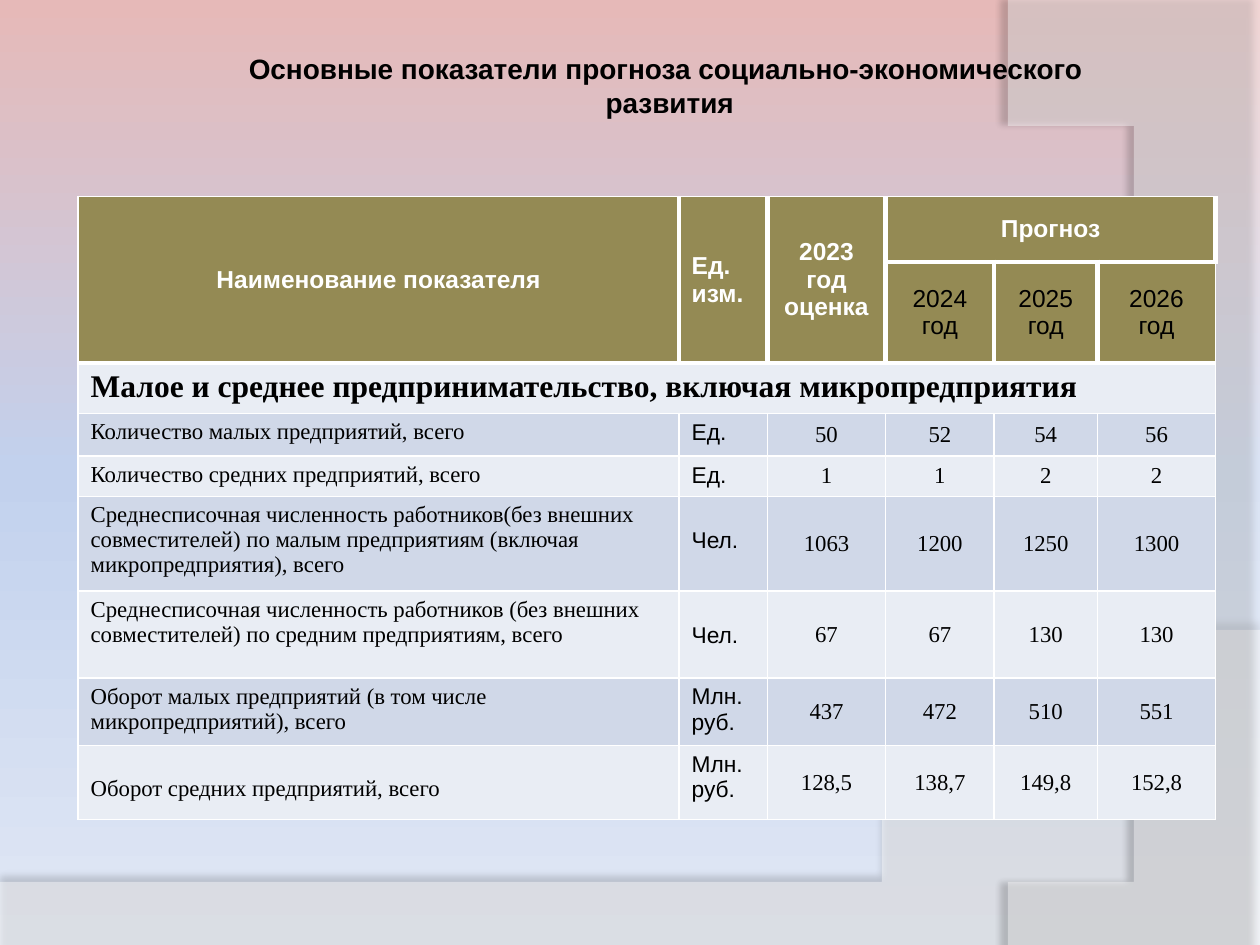
from copy import deepcopy
from dataclasses import dataclass

from pptx import Presentation
from pptx.dml.color import RGBColor
from pptx.enum.text import MSO_ANCHOR, PP_ALIGN
from pptx.oxml import parse_xml
from pptx.oxml.ns import nsdecls, qn
from pptx.util import Inches, Pt


@dataclass(frozen=True)
class Theme:
    """Colours, fonts and type sizes of the slide."""
    sky: tuple = ((0, "E6B9B8"), (0.5, "C2D1ED"), (1, "E1E8F5"))
    white: str = "FFFFFF"
    black: str = "000000"
    header: str = "948A54"
    bands: tuple = ("E9EDF4", "D0D8E8")
    sans: str = "Arial"
    serif: str = "Times New Roman"
    title: int = 16
    heading: int = 14
    section: int = 18
    body: int = 13
    thin: int = 1
    thick: int = 3


THEME = Theme()
COLUMNS = (4.77, 0.7, 0.94, 0.86, 0.82, 0.94)
ROWS = (0.52, 0.8, 0.4, 0.34, 0.32, 0.74, 0.69, 0.53, 0.59)
HEADERS = ("Наименование показателя", "Ед.\nизм.", "2023 год оценка", "Прогноз")
YEARS = ("2024 год", "2025 год", "2026 год")
SECTION = "Малое и среднее предпринимательство, включая микропредприятия"
INDICATORS = (
    ("Количество малых предприятий, всего", "Ед.", "50", "52", "54", "56"),
    ("Количество средних предприятий, всего", "Ед.", "1", "1", "2", "2"),
    ("Среднесписочная численность работников(без внешних совместителей) "
     "по малым предприятиям (включая микропредприятия), всего",
     "Чел.", "1063", "1200", "1250", "1300"),
    ("Среднесписочная численность работников (без внешних совместителей) "
     "по средним предприятиям, всего", "Чел.", "67", "67", "130", "130"),
    ("Оборот малых предприятий (в том числе микропредприятий), всего",
     "Млн.\nруб.", "437", "472", "510", "551"),
    ("Оборот средних предприятий, всего",
     "Млн.\nруб.", "128,5", "138,7", "149,8", "152,8"),
)
LOWERED = {(5, 1), (6, 1), (8, 0)}


def color(code):
    """Turn a hex code into a colour."""
    return RGBColor.from_string(code)


def write(frame, text, size, font, ink, bold=False, align=PP_ALIGN.LEFT):
    """Write each line of the text as a paragraph with one run."""
    for index, line in enumerate(text.split("\n")):
        para = frame.paragraphs[0] if index == 0 else frame.add_paragraph()
        para.alignment = align
        span = para.add_run()
        span.text = line
        span.font.size = Pt(size)
        span.font.name = font
        span.font.bold = bold
        span.font.color.rgb = color(ink)


def paint_background(page):
    """Fill the page with the vertical three-colour gradient."""
    fill = page.background.fill
    fill.gradient()
    fill.gradient_angle = 270
    stops = next(page.element.iter(qn("a:gsLst")))
    stops.append(deepcopy(stops[-1]))
    for stop, (position, code) in zip(fill.gradient_stops, THEME.sky):
        stop.position = position
        stop.color.rgb = color(code)


def curve(start, first, second, end, steps=60):
    """Return points along a cubic curve."""
    points = []
    for step in range(steps + 1):
        t = step / steps
        weights = ((1 - t) ** 3, 3 * t * (1 - t) ** 2, 3 * t * t * (1 - t), t ** 3)
        points.append(tuple(
            sum(w * p[axis] for w, p in zip(weights, (start, first, second, end)))
            for axis in (0, 1)))
    return points


def add_wave(page, points, opacity, shade, distance, direction):
    """Add a translucent white wave with a soft shadow."""
    builder = page.shapes.build_freeform(*points[0], scale=Inches(1))
    builder.add_line_segments(points[1:], close=True)
    wave = builder.convert_to_shape()
    wave.fill.solid()
    wave.fill.fore_color.rgb = color(THEME.white)
    wave.line.fill.background()
    tint = next(wave.element.spPr.iter(qn("a:srgbClr")))
    tint.append(parse_xml(f'<a:alpha {nsdecls("a")} val="{opacity * 1000}"/>'))
    wave.element.spPr.append(parse_xml(
        f'<a:effectLst {nsdecls("a")}><a:outerShdw blurRad="{Pt(4)}" '
        f'dist="{Pt(distance)}" dir="{direction * 60000}" algn="ctr" rotWithShape="0">'
        f'<a:srgbClr val="{THEME.black}"><a:alpha val="{shade * 1000}"/></a:srgbClr>'
        f'</a:outerShdw></a:effectLst>'))


def add_waves(page, width, height):
    """Place the bottom and right waves along the page edges."""
    bottom = curve((width, 5.2), (5.59, 7.29), (3.91, 7.19), (0, 7.05))
    add_wave(page, [(0, height), (width, height)] + bottom, 45, 35, 3.5, 270)
    right = curve((8.21, height), (9.35, 6.19), (10.18, 3), (8, 0))
    add_wave(page, [(width, 0.02), (width, height)] + right, 40, 45, 4, 180)


def add_title(page, left, top, width, height):
    """Place the centred two-line title."""
    box = page.shapes.add_textbox(*map(Inches, (left, top, width, height)))
    box.text_frame.word_wrap = True
    write(box.text_frame,
          "Основные показатели прогноза социально-экономического \nразвития",
          THEME.title, THEME.sans, THEME.black, True, PP_ALIGN.CENTER)


def style_cell(cell, row, column):
    """Set the borders, fill and margins of a cell from its position."""
    head = row < 2
    last = len(COLUMNS) - 1
    heavy = {"L": head and column > 0, "R": head and column < last,
             "T": row in (1, 2), "B": head}
    properties = cell._tc.get_or_add_tcPr()
    for side, thick in heavy.items():
        width = Pt(THEME.thick if thick else THEME.thin)
        properties.append(parse_xml(
            f'<a:ln{side} {nsdecls("a")} w="{width}"><a:solidFill>'
            f'<a:srgbClr val="{THEME.white}"/></a:solidFill></a:ln{side}>'))
    cell.fill.solid()
    cell.fill.fore_color.rgb = color(THEME.header if head else THEME.bands[row % 2])
    cell.margin_left = cell.margin_right = Inches(0.1)
    cell.margin_top = Inches(0.25 if (row, column) in LOWERED else 0.05)
    cell.margin_bottom = Inches(0.05)
    if head or (row > 2 and column > 1):
        cell.vertical_anchor = MSO_ANCHOR.MIDDLE


def add_forecast_table(page, left, top):
    """Place the table of indicators with its two-row header."""
    box = (left, top, sum(COLUMNS), sum(ROWS))
    table = page.shapes.add_table(len(ROWS), len(COLUMNS), *map(Inches, box)).table
    for column, width in zip(table.columns, COLUMNS):
        column.width = Inches(width)
    for row, height in zip(table.rows, ROWS):
        row.height = Inches(height)
    for row in range(len(ROWS)):
        for column in range(len(COLUMNS)):
            style_cell(table.cell(row, column), row, column)
    for column in range(3):
        table.cell(0, column).merge(table.cell(1, column))
    table.cell(0, 3).merge(table.cell(0, 5))
    table.cell(2, 0).merge(table.cell(2, 5))

    for column, text in enumerate(HEADERS):
        align = PP_ALIGN.LEFT if column == 1 else PP_ALIGN.CENTER
        write(table.cell(0, column).text_frame, text, THEME.heading, THEME.sans,
              THEME.white, True, align)
    for column, text in enumerate(YEARS, 3):
        write(table.cell(1, column).text_frame, text, THEME.heading, THEME.sans,
              THEME.black, align=PP_ALIGN.CENTER)
    write(table.cell(2, 0).text_frame, SECTION, THEME.section, THEME.serif,
          THEME.black, True)
    for row, indicator in enumerate(INDICATORS, 3):
        for column, text in enumerate(indicator):
            font = THEME.sans if column == 1 else THEME.serif
            align = PP_ALIGN.CENTER if column > 1 else PP_ALIGN.LEFT
            write(table.cell(row, column).text_frame, text, THEME.body, font,
                  THEME.black, align=align)


def main():
    """Build the slide and save the deck."""
    deck = Presentation()
    deck.slide_width, deck.slide_height = Inches(10), Inches(7.5)
    page = deck.slides.add_slide(deck.slide_layouts[6])
    paint_background(page)
    add_waves(page, 10, 7.5)
    add_title(page, 0.67, 0.36, 9.29, 0.64)
    add_forecast_table(page, 0.62, 1.56)
    deck.save("out.pptx")


if __name__ == "__main__":
    main()
